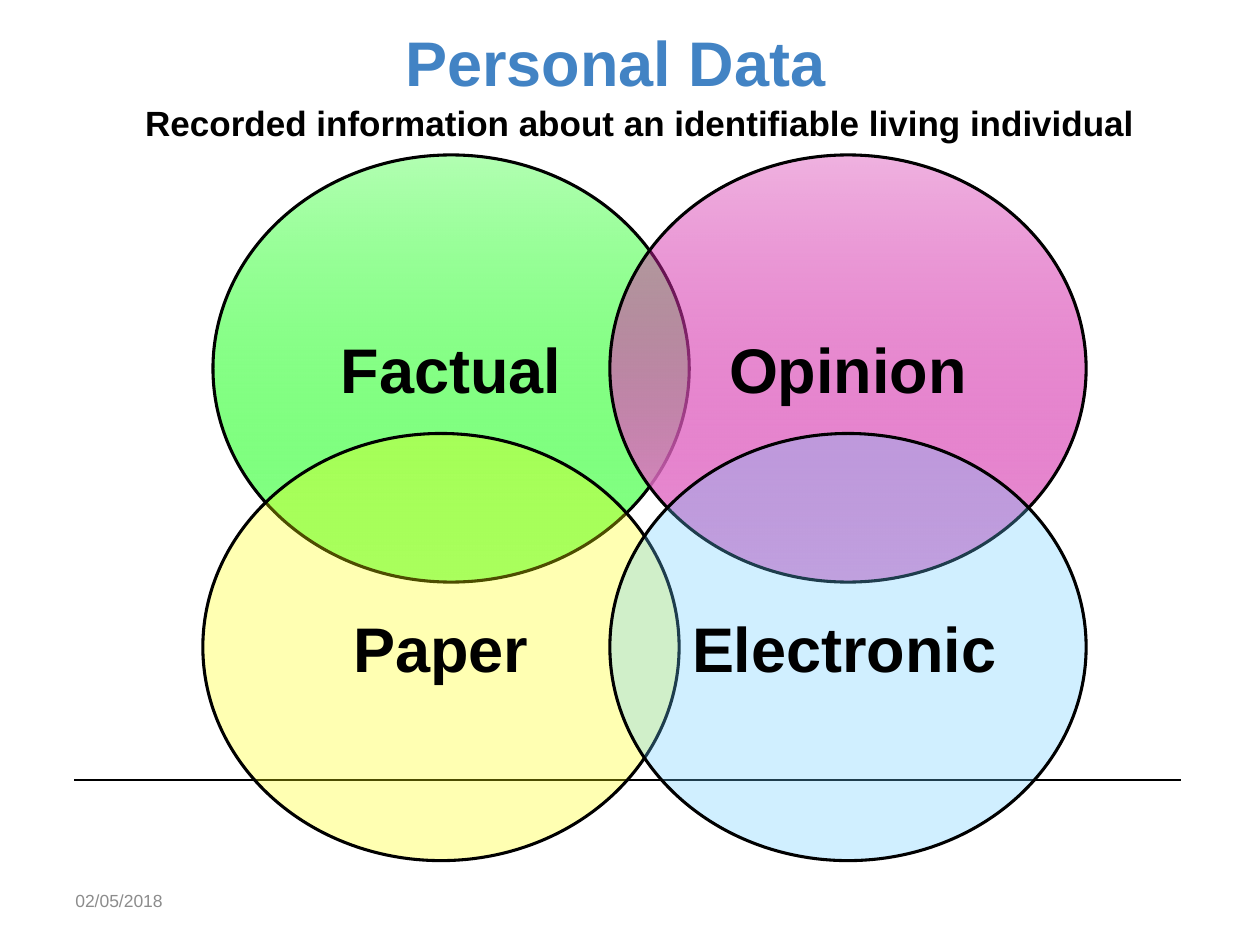
from lxml import etree
from pptx import Presentation
from pptx.dml.color import RGBColor
from pptx.enum import shapes, text
from pptx.oxml.ns import qn
from pptx.util import Inches, Pt


def color(hex_value):
    return RGBColor.from_string(hex_value)


class VennSlide:
    font = "Arial"
    ink = "000000"
    accent = "4283C4"
    muted = "8C8C8C"

    def __init__(self, deck):
        self.slide = deck.slides.add_slide(deck.slide_layouts[5])

    def add_wording(self, frame, wording, size, ink, bold=True, align=text.PP_ALIGN.CENTER,
                    anchor=text.MSO_ANCHOR.MIDDLE, wrap=True):
        frame.word_wrap = wrap
        frame.vertical_anchor = anchor
        paragraph = frame.paragraphs[0]
        paragraph.alignment = align
        run = paragraph.add_run()
        run.text = wording
        run.font.name = self.font
        run.font.size = Pt(size)
        run.font.bold = bold
        run.font.color.rgb = color(ink)

    def title(self, wording, left, top, width, height):
        heading = self.slide.shapes.title
        heading.left, heading.top = Inches(left), Inches(top)
        heading.width, heading.height = Inches(width), Inches(height)
        self.add_wording(heading.text_frame, wording, 36, self.accent)

    def label(self, wording, left, top, width, height, size, ink, **style):
        box = self.slide.shapes.add_textbox(
            Inches(left), Inches(top), Inches(width), Inches(height))
        self.add_wording(box.text_frame, wording, size, ink, **style)

    def rule(self, left, right, y):
        line = self.slide.shapes.add_connector(
            shapes.MSO_CONNECTOR.STRAIGHT,
            Inches(left), Inches(y), Inches(right), Inches(y))
        line.line.color.rgb = color(self.ink)
        line.line.width = Pt(1)
        etree.SubElement(line.element.spPr, qn("a:effectLst"))

    def circle(self, wording, left, top, tint, fade=None, **style):
        oval = self.slide.shapes.add_shape(
            shapes.MSO_SHAPE.OVAL,
            Inches(left), Inches(top), Inches(3.78), Inches(3.39))
        oval.shadow.inherit = False
        if fade:
            oval.fill.gradient()
            oval.fill.gradient_angle = 270
            for stop, position, shade in zip(oval.fill.gradient_stops, (0, 1), (tint, fade)):
                stop.position = position
                stop.color.rgb = color(shade)
        else:
            oval.fill.solid()
            oval.fill.fore_color.rgb = color(tint)
        tint_element = next(oval.element.spPr.iter(qn("a:srgbClr")))
        etree.SubElement(tint_element, qn("a:alpha"), val="30000")
        oval.line.color.rgb = color(self.ink)
        oval.line.width = Pt(1.75)
        self.add_wording(oval.text_frame, wording, 36, self.ink, **style)


def main():
    deck = Presentation()
    deck.slide_width, deck.slide_height = Inches(10), Inches(7.5)
    venn = VennSlide(deck)
    upper, lower, right = 1.23, 3.44, 4.84

    venn.rule(0.59, 9.37, 6.19)
    venn.label("02/05/2018", 0.5, 6.95, 2.33, 0.4, 10, venn.muted,
               bold=False, align=text.PP_ALIGN.LEFT)
    venn.title("Personal Data", 2.01, 0.13, 5.75, 0.71)
    venn.circle("Factual", 1.69, upper, "00FF00", "86FF86")
    venn.circle("Opinion", right, upper, "CC0099", "E88ED2", wrap=False)
    venn.circle("Paper", 1.61, lower, "FFFF00")
    venn.label("Recorded information about an identifiable living individual",
               0.67, 0.76, 8.82, 0.84, 20, venn.ink, anchor=text.MSO_ANCHOR.TOP)
    venn.circle("Electronic", right, lower, "66CCFF", align=text.PP_ALIGN.LEFT)
    deck.save("out.pptx")


if __name__ == "__main__":
    main()
